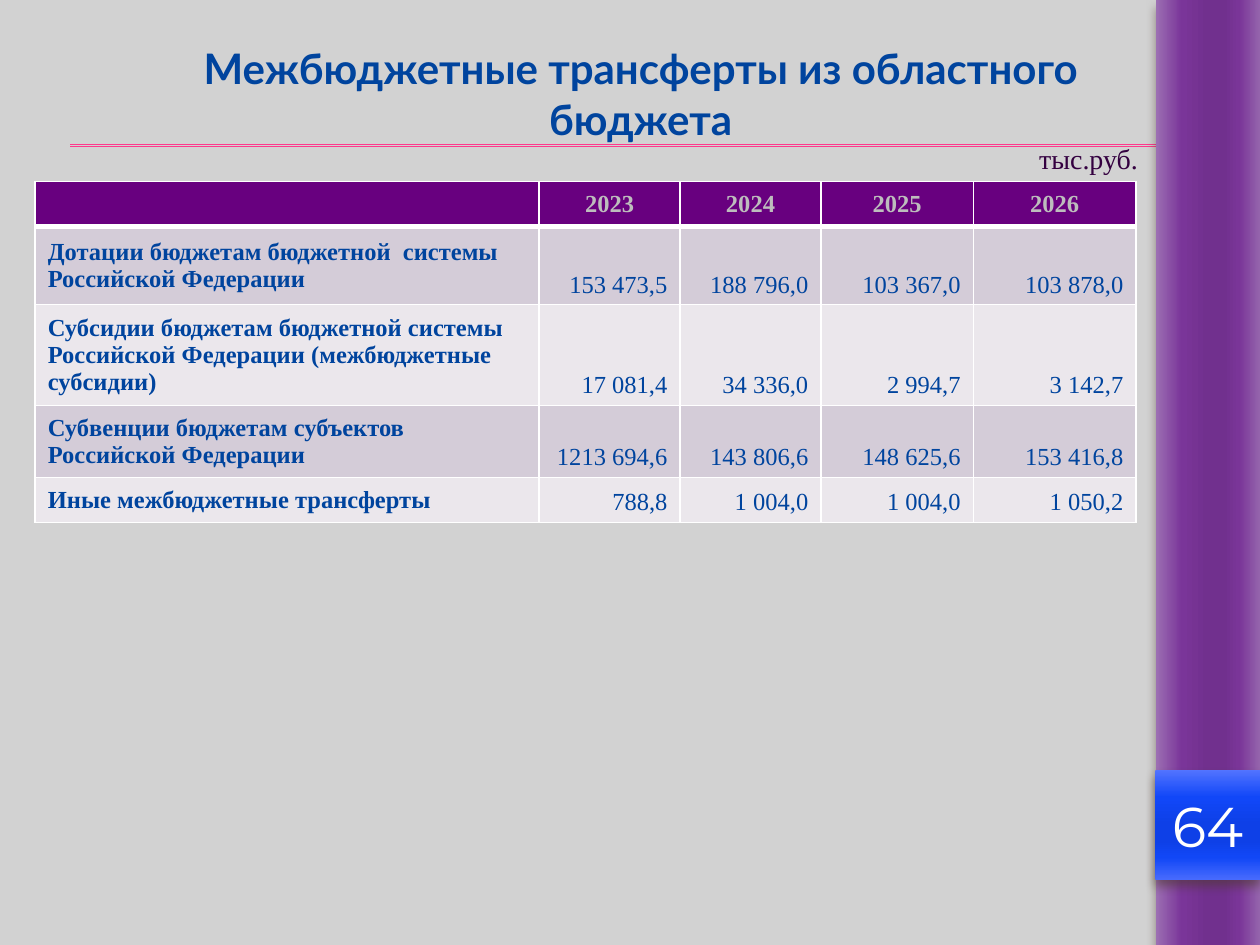
from typing import NamedTuple

import lxml.etree
import pptx
import pptx.dml.color
import pptx.enum.shapes
import pptx.enum.text
import pptx.oxml.ns
import pptx.util

Cm = pptx.util.Cm
Pt = pptx.util.Pt
Align = pptx.enum.text.PP_ALIGN
Anchor = pptx.enum.text.MSO_ANCHOR
Fit = pptx.enum.text.MSO_AUTO_SIZE
qn = pptx.oxml.ns.qn

INK = {
    "back": "D2D2D2", "rule": "FF388C", "shade": "4E3B30", "white": "FFFFFF",
    "blue": "00449E", "edge": "4E005F", "unit": "340040",
    "head": "68007F", "year": "BDBDBD", "odd": "D4CCD8", "even": "EBE7EC",
}
STOPS = (0, 25, 50, 65, 80, 100)
SERIF = "Times New Roman"


class Panel(NamedTuple):
    left: float
    top: float
    width: float
    height: float
    turn: int
    tones: tuple


class Style(NamedTuple):
    size: int
    font: str
    tone: str
    bold: bool = False
    align: Align = Align.LEFT


PANELS = [
    Panel(14.83, 8.47, 19.05, 2.11, 270,
          ("9C6FB3", "7A3599", "71308E", "71308E", "7A3598", "9566AD")),
    Panel(23.29, 15.52, 2.11, 2.21, 0,
          ("5374FF", "1147F8", "0E40E7", "0E40E7", "1147F6", "476AFD")),
]
WIDTHS = (10.16, 2.84, 2.84, 3.07, 3.28)
HEIGHTS = (0.91, 1.57, 2.01, 1.45, 0.91)
ROWS = [
    ("", "2023", "2024", "2025", "2026"),
    ("Дотации бюджетам бюджетной  системы Российской Федерации",
     "153 473,5", "188 796,0", "103 367,0", "103 878,0"),
    ("Субсидии бюджетам бюджетной системы Российской Федерации (межбюджетные субсидии)",
     "17 081,4", "34 336,0", "2 994,7", "3 142,7"),
    ("Субвенции бюджетам субъектов Российской Федерации",
     "1213 694,6", "143 806,6", "148 625,6", "153 416,8"),
    ("Иные межбюджетные трансферты", "788,8", "1 004,0", "1 004,0", "1 050,2"),
]


def color(tone: str) -> pptx.dml.color.RGBColor:
    return pptx.dml.color.RGBColor.from_string(INK[tone])


def add_tone(parent, value: str):
    return lxml.etree.SubElement(parent, qn("a:srgbClr"), val=value)


def make_line(tag: str, weight: float, tone: str):
    line = lxml.etree.Element(qn(tag), w=str(Pt(weight)))
    add_tone(lxml.etree.SubElement(line, qn("a:solidFill")), INK[tone])
    return line


def write(frame, text: str, style: Style) -> None:
    frame.text = text
    para = frame.paragraphs[0]
    para.alignment = style.align
    for run in para.runs:
        run.font.size = Pt(style.size)
        run.font.name = style.font
        run.font.bold = style.bold
        run.font.color.rgb = color(style.tone)
    if not text:  # keeps an empty cell from growing its row
        lxml.etree.SubElement(para._p, qn("a:endParaRPr"), sz=str(style.size * 100))


def add_rule(slide, y: float) -> None:
    rule = slide.shapes.add_connector(
        pptx.enum.shapes.MSO_CONNECTOR.STRAIGHT, Cm(1.42), Cm(y), Cm(25.4), Cm(y))
    rule.line.color.rgb = color("rule")
    rule.line.width = Pt(0.75)
    lxml.etree.SubElement(rule._element.spPr, qn("a:effectLst"))


def add_panel(slide, panel: Panel):
    shape = slide.shapes.add_shape(
        pptx.enum.shapes.MSO_SHAPE.RECTANGLE, *(Cm(n) for n in panel[:4]))
    shape.rotation = panel.turn
    shape.line.fill.background()
    # Six-stop gradient running down the shape
    shape.fill.gradient()
    shape.fill.gradient_angle = 270
    stops = shape._element.spPr.find(".//" + qn("a:gsLst"))
    stops[:] = []
    for place, tone in zip(STOPS, panel.tones):
        add_tone(lxml.etree.SubElement(stops, qn("a:gs"), pos=str(place * 1000)), tone)
    # Soft shadow
    shape.shadow.inherit = False
    effects = shape._element.spPr.find(qn("a:effectLst"))
    shade = lxml.etree.SubElement(
        effects, qn("a:outerShdw"), blurRad=str(Pt(6)), dist=str(Pt(4)), dir="5400000")
    lxml.etree.SubElement(add_tone(shade, INK["shade"]), qn("a:alpha"), val="60000")
    return shape


def add_text(slide, box: tuple, text: str, style: Style, wrap: bool):
    frame = slide.shapes.add_textbox(*(Cm(n) for n in box)).text_frame
    frame.word_wrap = wrap
    frame.auto_size = Fit.SHAPE_TO_FIT_TEXT
    write(frame, text, style)
    return frame


def set_edge(cell, row: int) -> None:
    props = cell._tc.get_or_add_tcPr()
    weights = {"L": 1, "R": 1, "T": 3 if row == 1 else 1, "B": 3 if row == 0 else 1}
    for spot, (side, weight) in enumerate(weights.items()):
        props.insert(spot, make_line("a:ln" + side, weight, "white"))


def add_grid(slide) -> None:
    table = slide.shapes.add_table(
        len(ROWS), len(WIDTHS), Cm(0.71), Cm(3.66),
        Cm(sum(WIDTHS)), Cm(sum(HEIGHTS))).table
    table.horz_banding = False
    for column, width in zip(table.columns, WIDTHS):
        column.width = Cm(width)
    for r, texts in enumerate(ROWS):
        table.rows[r].height = Cm(HEIGHTS[r])
        for c, text in enumerate(texts):
            cell = table.cell(r, c)
            cell.vertical_anchor = Anchor.BOTTOM if r and c else Anchor.MIDDLE
            if r == 0:
                tone, style = "head", Style(14, SERIF, "year", True, Align.CENTER)
            else:
                tone = "odd" if r % 2 else "even"
                style = Style(14, SERIF, "blue", c == 0, Align.RIGHT if c else Align.LEFT)
            cell.fill.solid()
            cell.fill.fore_color.rgb = color(tone)
            set_edge(cell, r)
            write(cell.text_frame, text, style)


def main() -> None:
    deck = pptx.Presentation()
    deck.slide_width, deck.slide_height = Cm(25.4), Cm(19.05)
    slide = deck.slides.add_slide(deck.slide_layouts[6])
    slide.background.fill.solid()
    slide.background.fill.fore_color.rgb = color("back")

    # Rules under the title, side band and page number
    for y in (2.92, 2.95):
        add_rule(slide, y)
    band, badge = [add_panel(slide, panel) for panel in PANELS]
    frame = badge.text_frame
    frame.margin_left = frame.margin_right = 0
    frame.vertical_anchor = Anchor.MIDDLE
    write(frame, "64", Style(32, "Montserrat", "white", align=Align.CENTER))

    # Title with outlined letters
    title = add_text(slide, (2.31, 0.74, 21.21, 2.31),
                     "Межбюджетные трансферты из областного бюджета",
                     Style(24, "Lato", "blue", True, Align.CENTER), True)
    props = title.paragraphs[0].runs[0]._r.get_or_add_rPr()
    props.insert(0, make_line("a:ln", 0.75, "edge"))

    # Table and its unit
    add_grid(slide)
    add_text(slide, (20.7, 2.72, 2.54, 0.94), "тыс.руб.",
             Style(16, SERIF, "unit"), False)
    deck.save("out.pptx")


if __name__ == "__main__":
    main()
